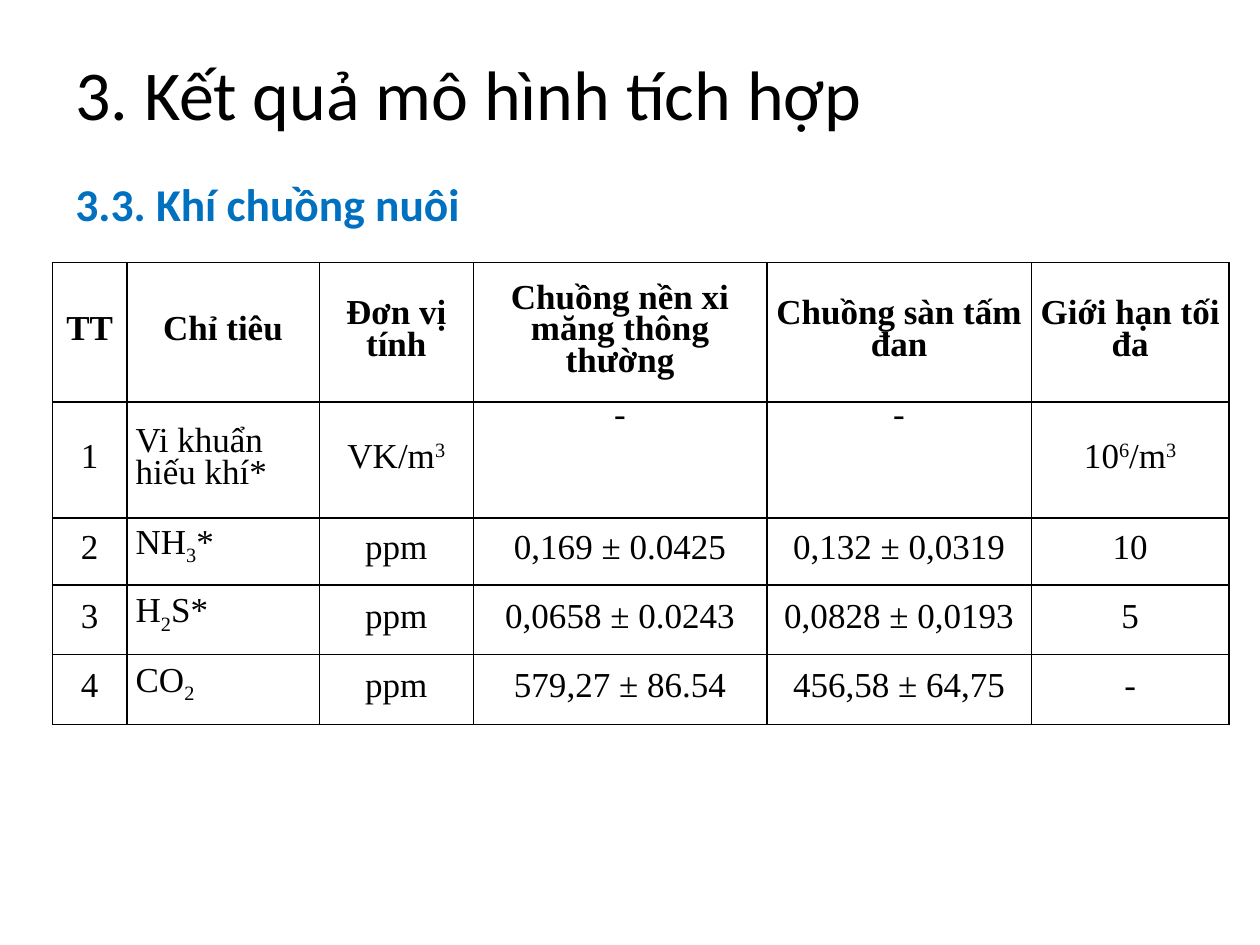
import pptx
import pptx.dml.color
import pptx.enum.text
import pptx.oxml
import pptx.oxml.ns
import pptx.util
from dataclasses import dataclass

Pt = pptx.util.Pt
Align = pptx.enum.text.PP_ALIGN
Anchor = pptx.enum.text.MSO_ANCHOR


@dataclass(frozen=True)
class Theme:
    ink: str = "000000"
    accent: str = "0070C0"
    paper: str = "FFFFFF"
    heading_font: str = "Calibri"
    table_font: str = "Times New Roman"
    title_size: float = 40
    subtitle_size: float = 26
    table_size: float = 20
    table_leading: float = 18
    border: float = 1
    cell_inset: float = 5


def rgb(value):
    return pptx.dml.color.RGBColor.from_string(value)


def sup(text):
    return text, 30000


def sub(text):
    return text, -25000


def write(para, content, *, font, size, color, bold=False, align=Align.LEFT, leading=None):
    """Fill a paragraph from a string or a list of strings and (text, baseline) pairs."""
    para.alignment = align
    if leading:
        para.line_spacing = Pt(leading)
    for piece in [content] if isinstance(content, str) else content:
        text, baseline = (piece, 0) if isinstance(piece, str) else piece
        span = para.add_run()
        span.text = text
        span.font.name, span.font.size, span.font.bold = font, Pt(size), bold
        span.font.color.rgb = rgb(color)
        if baseline:
            span.font._element.set("baseline", str(baseline))


class SlideBuilder:
    def __init__(self, page, theme):
        self.page = page
        self.theme = theme

    def text(self, content, left, top, width, height, anchor=Anchor.TOP, **style):
        box = self.page.shapes.add_textbox(Pt(left), Pt(top), Pt(width), Pt(height))
        frame = box.text_frame
        frame.word_wrap = True
        frame.vertical_anchor = anchor
        write(frame.paragraphs[0], content, font=self.theme.heading_font, **style)

    def borders(self, cell):
        properties = cell._tc.get_or_add_tcPr()
        for index, side in enumerate(("lnL", "lnR", "lnT", "lnB")):
            properties.insert(index, pptx.oxml.parse_xml(
                f'<a:{side} {pptx.oxml.ns.nsdecls("a")} w="{Pt(self.theme.border)}">'
                f'<a:solidFill><a:srgbClr val="{self.theme.ink}"/></a:solidFill></a:{side}>'))

    def cell(self, cell, content, bold, align, anchor):
        theme = self.theme
        cell.margin_left = cell.margin_right = Pt(theme.cell_inset)
        cell.margin_top = cell.margin_bottom = 0
        cell.vertical_anchor = anchor
        cell.fill.solid()
        cell.fill.fore_color.rgb = rgb(theme.paper)
        self.borders(cell)
        write(cell.text_frame.paragraphs[0], content, font=theme.table_font,
              size=theme.table_size, color=theme.ink, bold=bold, align=align,
              leading=theme.table_leading)

    def table(self, rows, left, top, widths, heights, left_column, top_cells):
        table = self.page.shapes.add_table(
            len(rows), len(widths), Pt(left), Pt(top),
            Pt(sum(widths)), Pt(sum(heights))).table
        for column, width in zip(table.columns, widths):
            column.width = Pt(width)
        for row, height in zip(table.rows, heights):
            row.height = Pt(height)
        for r, row in enumerate(rows):
            for c, content in enumerate(row):
                self.cell(table.cell(r, c), content, bold=r == 0,
                          align=Align.LEFT if r and c == left_column else Align.CENTER,
                          anchor=Anchor.TOP if (r, c) in top_cells else Anchor.MIDDLE)


GAS_ROWS = [
    ["TT", "Chỉ tiêu", "Đơn vị tính", "Chuồng nền xi măng thông thường",
     "Chuồng sàn tấm đan", "Giới hạn tối đa"],
    ["1", "Vi khuẩn hiếu khí*", ["VK/m", sup("3")], "-", "-",
     ["10", sup("6"), "/m", sup("3")]],
    ["2", ["NH", sub("3"), "*"], "ppm", "0,169 ± 0.0425", "0,132 ± 0,0319", "10"],
    ["3", ["H", sub("2"), "S*"], "ppm", "0,0658 ± 0.0243", "0,0828 ± 0,0193", "5"],
    ["4", ["CO", sub("2")], "ppm", "579,27 ± 86.54", "456,58 ± 64,75", "-"],
]


def main():
    theme = Theme()
    deck = pptx.Presentation()
    deck.slide_width, deck.slide_height = Pt(720), Pt(540)
    builder = SlideBuilder(deck.slides.add_slide(deck.slide_layouts[6]), theme)

    # Headings
    builder.text("3.3. Khí chuồng nuôi", 36, 97, 648, 386, bold=True,
                 size=theme.subtitle_size, color=theme.accent)
    builder.text("3. Kết quả mô hình tích hợp", 36, 21.6, 648, 63, anchor=Anchor.MIDDLE,
                 size=theme.title_size, color=theme.ink)

    # Barn air measurements
    builder.table(GAS_ROWS, 30, 150, widths=[42.5, 110, 88, 167.7, 151.2, 113],
                  heights=[79.8, 66.2, 38.3, 39.8, 39.8],
                  left_column=1, top_cells={(1, 3), (1, 4)})

    deck.save("out.pptx")


if __name__ == "__main__":
    main()
